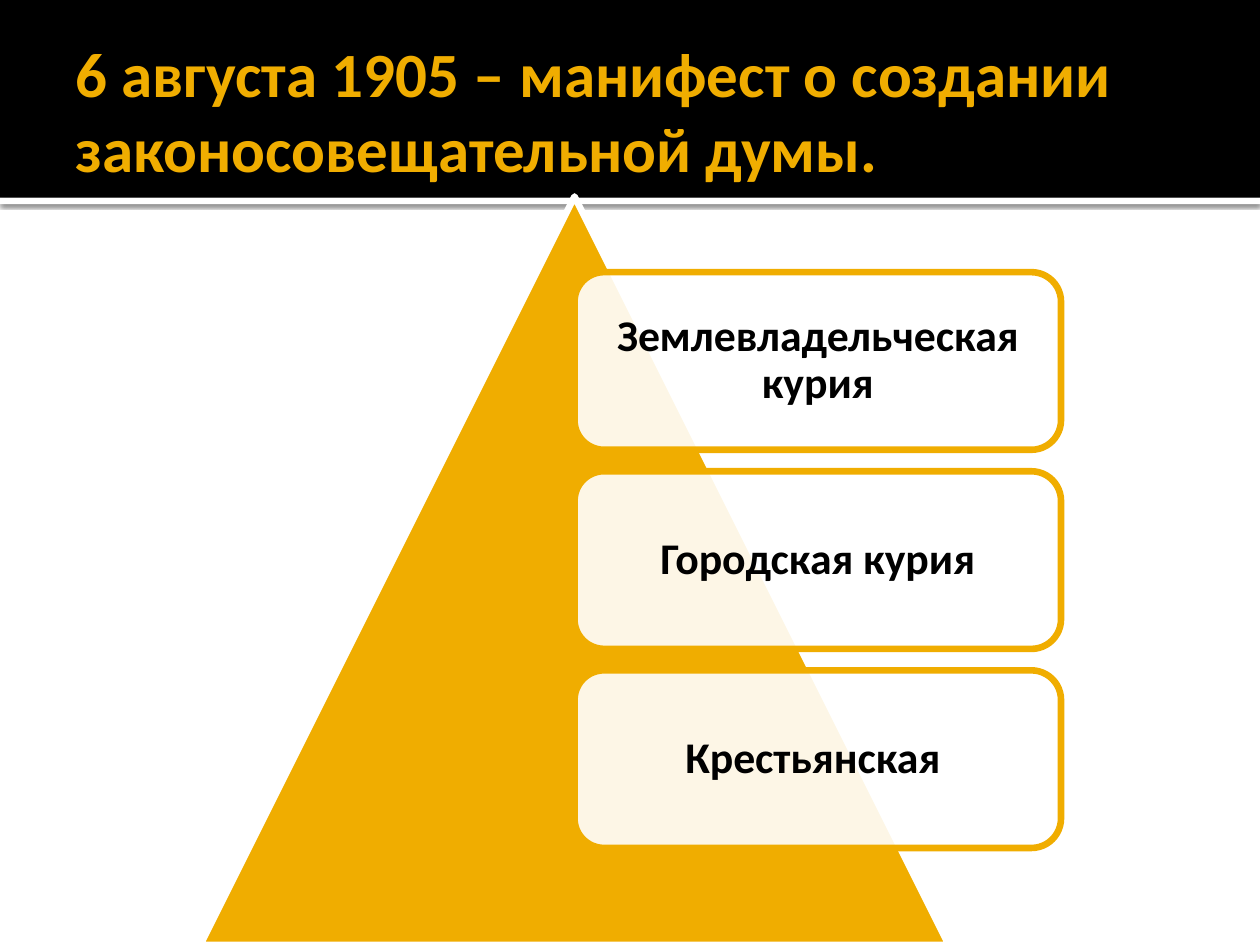
import pptx
import pptx.util
import pptx.dml.color
import pptx.enum.shapes
import pptx.enum.text
import pptx.oxml
import pptx.oxml.ns
import lxml.etree

THEME = {
    "font": "Calibri",
    "gold": pptx.dml.color.RGBColor.from_string("F0AD00"),
    "black": pptx.dml.color.RGBColor.from_string("000000"),
    "white": pptx.dml.color.RGBColor.from_string("FFFFFF"),
    "title_size": pptx.util.Pt(36),
    "label_size": pptx.util.Pt(25),
    "outline": pptx.util.Pt(3.78),
}
SHAPES = pptx.enum.shapes.MSO_SHAPE
ALIGN = pptx.enum.text.PP_ALIGN
inch = pptx.util.Inches

deck = pptx.Presentation()
deck.slide_width, deck.slide_height = inch(10), inch(7.5)
page = deck.slides.add_slide(deck.slide_layouts[5])


def add_filled(kind, left, top, width, height, fill, line=None):
    shape = page.shapes.add_shape(kind, inch(left), inch(top), inch(width), inch(height))
    shape.shadow.inherit = False
    shape.fill.solid()
    shape.fill.fore_color.rgb = fill
    if line is None:
        shape.line.fill.background()
    else:
        shape.line.color.rgb = line
        shape.line.width = THEME["outline"]
    return shape


def write(frame, text, size, color, align, insets):
    frame.word_wrap = True
    frame.auto_size = pptx.enum.text.MSO_AUTO_SIZE.NONE
    frame.vertical_anchor = pptx.enum.text.MSO_ANCHOR.MIDDLE
    frame.margin_left, frame.margin_top, frame.margin_right, frame.margin_bottom = map(inch, insets)
    para = frame.paragraphs[0]
    para.text = text
    para.alignment = align
    para.font.name = THEME["font"]
    para.font.size = size
    para.font.bold = True
    para.font.color.rgb = color
    return para


band_height = 1.57
stripe = add_filled(SHAPES.RECTANGLE, 0, band_height, 10, 0.05, THEME["white"])
effects = stripe.element.spPr.find(pptx.oxml.ns.qn("a:effectLst"))
shadow = lxml.etree.SubElement(
    effects, pptx.oxml.ns.qn("a:outerShdw"),
    blurRad=str(pptx.util.Pt(2.5)), dist=str(pptx.util.Pt(0.8)), dir="5400000")
shade = lxml.etree.SubElement(shadow, pptx.oxml.ns.qn("a:srgbClr"), val=str(THEME["black"]))
lxml.etree.SubElement(shade, pptx.oxml.ns.qn("a:alpha"), val="60000")
add_filled(SHAPES.RECTANGLE, 0, 0, 10, band_height, THEME["black"])

title = page.shapes.title
title.left, title.top, title.width, title.height = map(inch, (0.5, 0.17, 9, 1.4))
write(title.text_frame, "6 августа 1905 – манифест о создании законосовещательной думы.",
      THEME["title_size"], THEME["gold"], ALIGN.LEFT, (0.1, 0.05, 0.05, 0.05))
page.shapes.element.append(title.element)

side = 5.94
pyramid_left, pyramid_top = 1.59, 7.5 - side
add_filled(SHAPES.ISOSCELES_TRIANGLE, pyramid_left, pyramid_top, side, side,
           THEME["gold"], THEME["white"])

card_left = pyramid_left + side / 2
first_top, card_width, card_height, row_step = 2.16, 0.65 * side, 1.41, 1.58
for row, label in enumerate(("Землевладельческая курия", "Городская курия", "Крестьянская ")):
    card = add_filled(SHAPES.ROUNDED_RECTANGLE, card_left, first_top + row * row_step,
                      card_width, card_height, THEME["white"], THEME["gold"])
    tint = card.element.spPr.find(".//" + pptx.oxml.ns.qn("a:srgbClr"))
    lxml.etree.SubElement(tint, pptx.oxml.ns.qn("a:alpha"), val="90000")
    para = write(card.text_frame, label, THEME["label_size"], THEME["black"],
                 ALIGN.CENTER, (0.1, 0.1, 0.1, 0.1))
    para.line_spacing = 0.9

deck.save("out.pptx")
